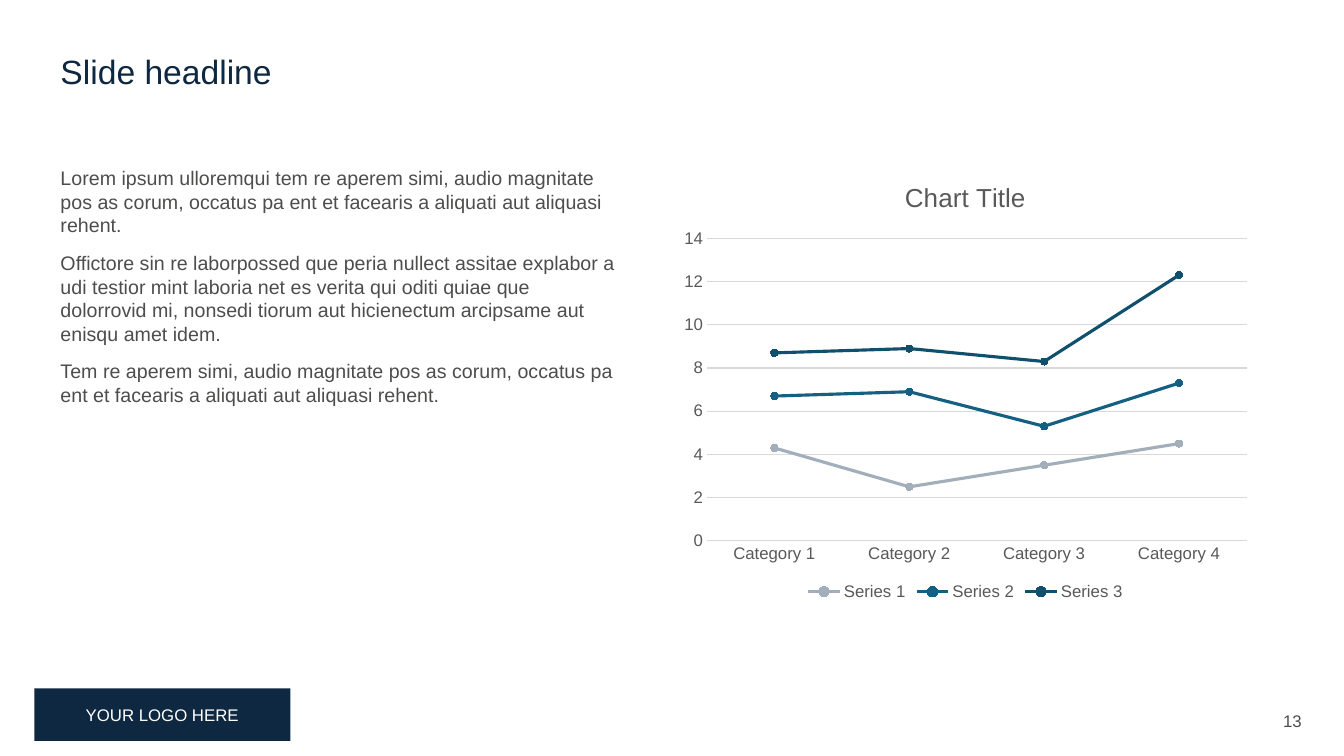
import pptx
import pptx.chart.data
import pptx.dml.color
import pptx.enum.chart
import pptx.enum.shapes
import pptx.enum.text
import pptx.util
from pptx.util import Inches

NAVY, GREY, AXIS_GREY, GRID_GREY = "0E2841", "4D4E4C", "595959", "D9D9D9"
ALIGN = pptx.enum.text.PP_ALIGN
ANCHOR = pptx.enum.text.MSO_ANCHOR


def rgb(value):
    return pptx.dml.color.RGBColor.from_string(value)


def style_font(font, size, color):
    font.color.rgb = rgb(color)
    for name, value in {"name": "Arial", "size": pptx.util.Pt(size), "bold": False}.items():
        setattr(font, name, value)


prs = pptx.Presentation()
prs.slide_width, prs.slide_height = Inches(13.33), Inches(7.5)
s = prs.slides.add_slide(prs.slide_layouts[1])
title, body = s.shapes.title, s.placeholders[1]

logo_box = s.shapes.add_shape(
    pptx.enum.shapes.MSO_SHAPE.RECTANGLE, Inches(0.34), Inches(6.83), Inches(2.54), Inches(0.52))
logo_box.shadow.inherit = False
logo_box.fill.solid()
logo_box.fill.fore_color.rgb = rgb(NAVY)
logo_box.line.fill.background()
page_number = s.shapes.add_textbox(Inches(10.01), Inches(6.95), Inches(3), Inches(0.4))

for sp, box in ((title, (0.5, 0.5, 11.97, 0.59)), (body, (0.5, 1.6, 5.76, 4.4))):
    sp.left, sp.top, sp.width, sp.height = map(Inches, box)

paragraphs = [
    "Lorem ipsum ulloremqui tem re aperem simi, audio magnitate pos as corum, "
    "occatus pa ent et facearis a aliquati aut aliquasi rehent.",
    "Offictore sin re laborpossed que peria nullect assitae explabor a udi testior mint "
    "laboria net es verita qui oditi quiae que dolorrovid mi, nonsedi tiorum aut "
    "hicienectum arcipsame aut enisqu amet idem.",
    "Tem re aperem simi, audio magnitate pos as corum, "
    "occatus pa ent et facearis a aliquati aut aliquasi rehent.",
]
texts = [
    (logo_box, ["YOUR LOGO HERE"], 12, "FFFFFF", ALIGN.CENTER, ANCHOR.MIDDLE, 1.0),
    (page_number, ["13"], 12, GREY, ALIGN.RIGHT, ANCHOR.MIDDLE, 1.0),
    (title, ["Slide headline"], 24, NAVY, ALIGN.LEFT, ANCHOR.TOP, 0.9),
    (body, paragraphs, 14, GREY, ALIGN.LEFT, ANCHOR.TOP, 1.0),
]
for sp, lines, size, color, align, anchor, spacing in texts:
    tf = sp.text_frame
    frame_format = {"word_wrap": True, "auto_size": pptx.enum.text.MSO_AUTO_SIZE.NONE,
                    "vertical_anchor": anchor}
    for name, value in frame_format.items():
        setattr(tf, name, value)
    for i, line in enumerate(lines):
        p = tf.add_paragraph() if i else tf.paragraphs[0]
        paragraph_format = {"alignment": align, "line_spacing": spacing,
                            "space_before": pptx.util.Pt(10 if i else 0)}
        for name, value in paragraph_format.items():
            setattr(p, name, value)
        if sp is body:
            pPr = p._p.get_or_add_pPr()
            pPr.set("marL", "0")
            pPr.set("indent", "0")
            pPr.append(pptx.oxml.parse_xml(
                '<a:buNone xmlns:a="http://schemas.openxmlformats.org/drawingml/2006/main"/>'))
        r = p.add_run()
        r.text = line
        style_font(r.font, size, color)

series = [
    ("Series 1", (4.3, 2.5, 3.5, 4.5), "A2AFBB"),
    ("Series 2", (2.4, 4.4, 1.8, 2.8), "156082"),
    ("Series 3", (2, 2, 3, 5), "11506C"),
]
data = pptx.chart.data.CategoryChartData()
data.categories = [f"Category {n}" for n in range(1, 5)]
for name, values, color in series:
    data.add_series(name, values)
chart = s.shapes.add_chart(
    pptx.enum.chart.XL_CHART_TYPE.LINE_MARKERS_STACKED,
    Inches(6.67), Inches(1.6), Inches(5.81), Inches(4.4), data).chart
style_font(chart.font, 10, "000000")

chart.has_title = True
r = chart.chart_title.text_frame.paragraphs[0].add_run()
r.text = "Chart Title"
style_font(r.font, 18.6, AXIS_GREY)
chart.chart_title.include_in_layout = False

chart.has_legend = True
chart.legend.position = pptx.enum.chart.XL_LEGEND_POSITION.BOTTOM
chart.legend.include_in_layout = False
style_font(chart.legend.font, 12, AXIS_GREY)

for axis in (chart.category_axis, chart.value_axis):
    axis.major_tick_mark = axis.minor_tick_mark = pptx.enum.chart.XL_TICK_MARK.NONE
    style_font(axis.tick_labels.font, 12, AXIS_GREY)
chart.value_axis.has_major_gridlines = True
chart.value_axis.format.line.fill.background()
for line in (chart.category_axis.format.line, chart.value_axis.major_gridlines.format.line):
    line.color.rgb = rgb(GRID_GREY)
    line.width = pptx.util.Pt(0.75)

plot = chart.plots[0]
plot.vary_by_categories = False
for line_series, (name, values, color) in zip(plot.series, series):
    line_series.smooth = False
    line_series.format.line.color.rgb = rgb(color)
    line_series.format.line.width = pptx.util.Pt(2.25)
    marker = line_series.marker
    marker.style = pptx.enum.chart.XL_MARKER_STYLE.CIRCLE
    marker.size = 5
    marker.format.fill.solid()
    marker.format.fill.fore_color.rgb = rgb(color)
    marker.format.line.color.rgb = rgb(color)

prs.save("out.pptx")
